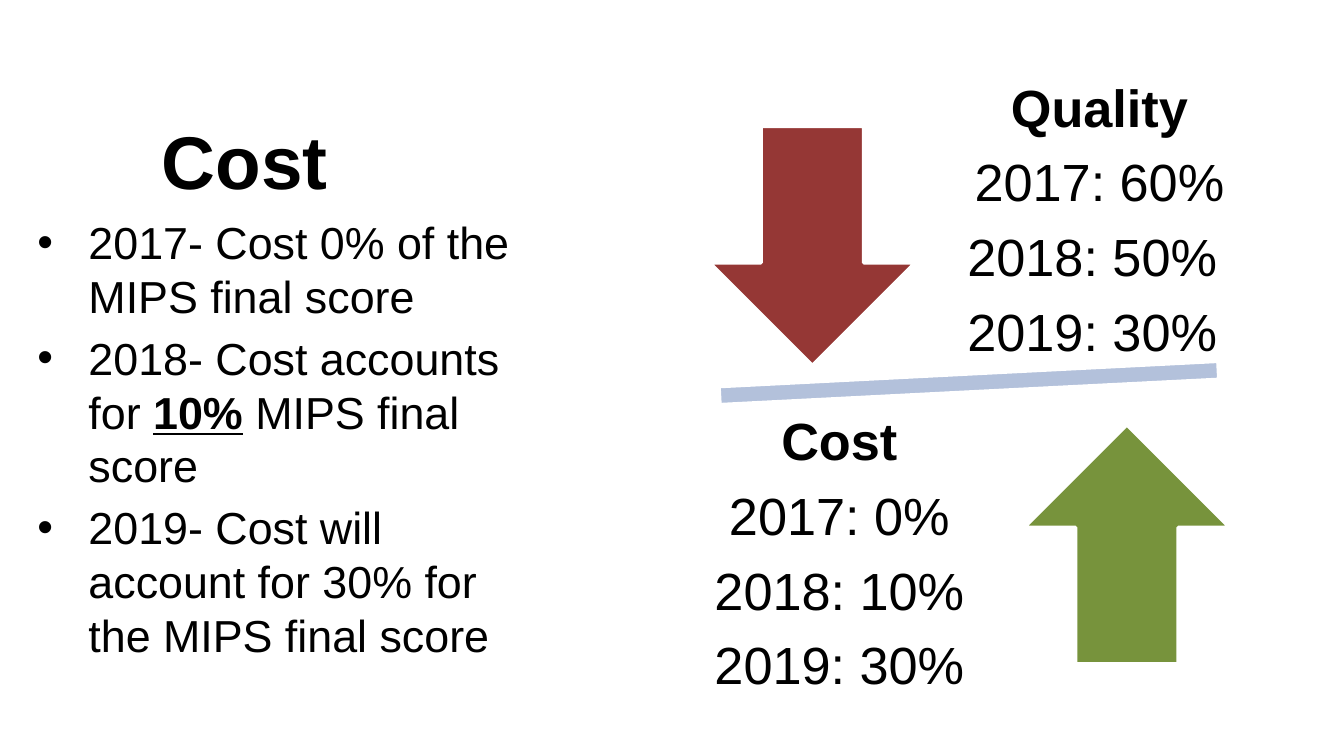
from lxml import etree
from pptx import Presentation
from pptx.dml.color import RGBColor
from pptx.enum.shapes import MSO_SHAPE
from pptx.enum.text import MSO_ANCHOR, PP_ALIGN
from pptx.oxml.ns import qn
from pptx.util import Inches, Pt

MINUS, DOWN, UP = MSO_SHAPE.MATH_MINUS, MSO_SHAPE.DOWN_ARROW, MSO_SHAPE.UP_ARROW
MIDDLE, TOP = MSO_ANCHOR.MIDDLE, MSO_ANCHOR.TOP
CENTER, LEFT = PP_ALIGN.CENTER, PP_ALIGN.LEFT


def color(code):
    return RGBColor.from_string(code)


class Deck:
    font = "Arial"
    ink = "000000"
    edge = "FFFFFF"

    def __init__(self, wide, high):
        self.prs = Presentation()
        self.prs.slide_width, self.prs.slide_height = Inches(wide), Inches(high)
        self.slide = self.prs.slides.add_slide(self.prs.slide_layouts[6])

    def shape(self, kind, box, fill, turn=0):
        shape = self.slide.shapes.add_shape(kind, *map(Inches, box))
        shape.shadow.inherit = False
        shape.rotation = turn
        shape.fill.solid()
        shape.fill.fore_color.rgb = color(fill)
        shape.line.color.rgb = color(self.edge)
        shape.line.width = Pt(2)

    def text(self, box, paras, size, align=CENTER, anchor=MIDDLE, inset=None,
             line=1.0, before=0, after=0, bullet=False):
        """Add paragraphs, each a list of (words, style); style holds b and u."""
        frame = self.slide.shapes.add_textbox(*map(Inches, box)).text_frame
        frame.word_wrap = True
        frame.vertical_anchor = anchor
        if inset is not None:
            frame.margin_left = frame.margin_right = Inches(inset)
            frame.margin_top = frame.margin_bottom = Inches(inset)
        for i, runs in enumerate(paras):
            para = frame.add_paragraph() if i else frame.paragraphs[0]
            if bullet:
                self.bullet(para)
            para.alignment = align
            para.line_spacing = line
            para.space_before = Pt(before if i else 0)
            para.space_after = Pt(after)
            for words, style in runs:
                run = para.add_run()
                run.text = words
                font = run.font
                font.name, font.size = self.font, Pt(size)
                font.color.rgb = color(self.ink)
                font.bold, font.underline = "b" in style, "u" in style

    def bullet(self, para):
        props = para._p.get_or_add_pPr()
        props.set("marL", str(Inches(0.38)))
        props.set("indent", str(-Inches(0.38)))
        etree.SubElement(props, qn("a:buFont")).set("typeface", self.font)
        etree.SubElement(props, qn("a:buChar")).set("char", "•")

    def score(self, box, head, rows):
        """Add a bold heading over its yearly shares."""
        paras = [[(head, "b")]] + [[(row, "")] for row in rows]
        self.text(box, paras, 28, inset=0.22, line=0.9, after=9.8)


def main():
    deck = Deck(10, 10 * 9 / 16)
    deck.text((-2.68, 0.72, 9, 0.94), [[("Cost", "b")]], 40)
    points = [
        [("2017- Cost 0% of the MIPS final score", "")],
        [("2018- Cost accounts for ", ""), ("10%", "bu"),
         (" MIPS final score", "")],
        [("2019- Cost will account for 30% for the MIPS final score", "")],
    ]
    deck.text((0.18, 1.55, 3.75, 3.88), points, 24, align=LEFT, anchor=TOP,
              before=4.3, bullet=True)

    deck.shape(MINUS, (4.68, 2.56, 5.06, 0.58), "B3C1DB", turn=357.1)
    deck.shape(DOWN, (5.28, 0.94, 1.53, 1.78), "953735")
    deck.score((6.72, 0.72, 2.92, 1.87), "Quality",
               ["2017: 60%", "2018: 50% ", "2019: 30% "])
    deck.shape(UP, (7.62, 3.16, 1.53, 1.78), "77933C")
    deck.score((4.91, 3.2, 2.67, 1.87), "Cost",
               ["2017: 0%", "2018: 10%", "2019: 30%"])
    deck.prs.save("out.pptx")


if __name__ == "__main__":
    main()
